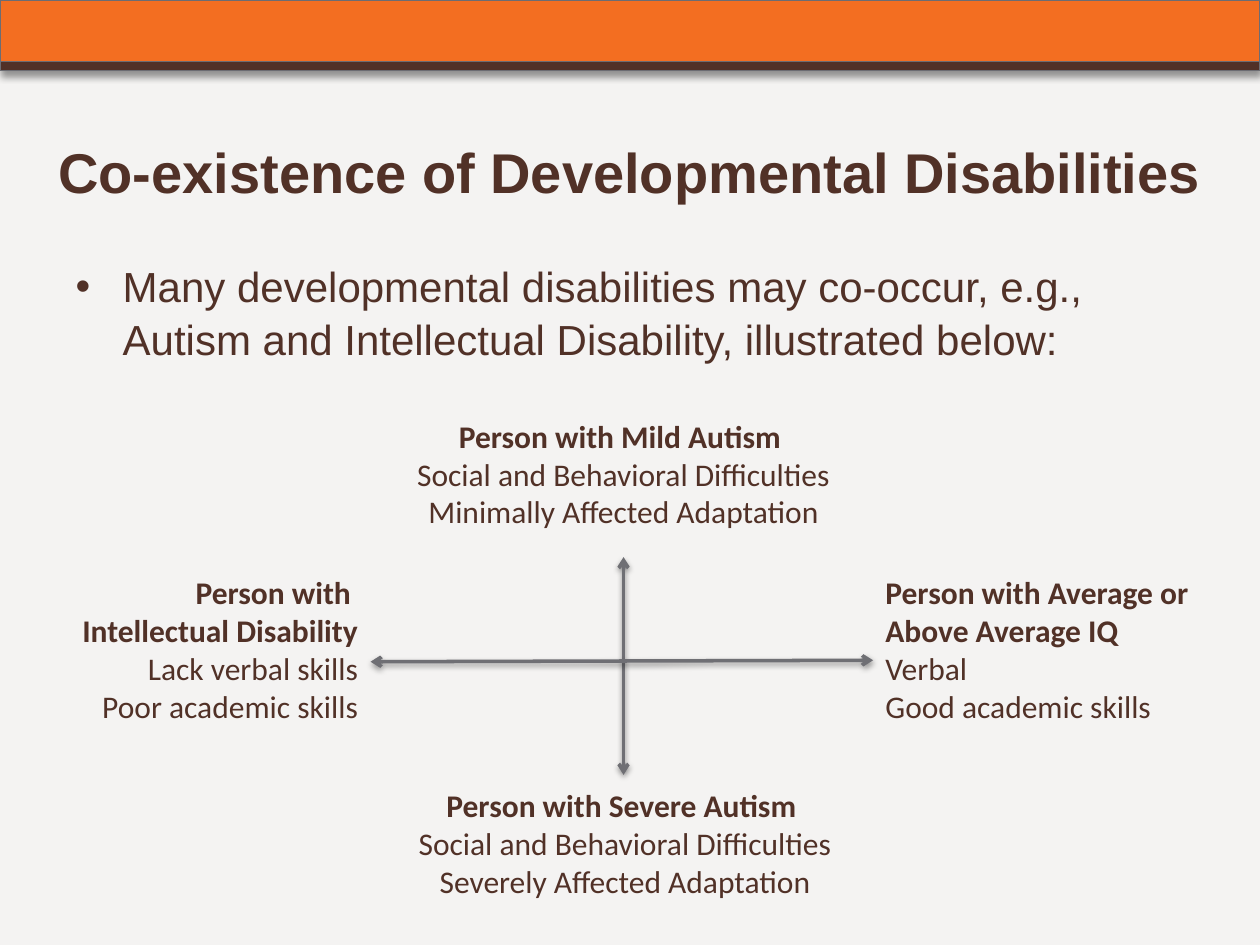
from lxml import etree
from pptx import Presentation
from pptx.dml.color import RGBColor
from pptx.enum import shapes, text
from pptx.oxml import ns
from pptx.util import Cm, Pt

BROWN, ORANGE = "513127", "F36E21"
BORDER, AXIS, BACKGROUND = "6C6C72", "6F6F74", "F4F3F2"


def paint(colored, hex_color):
    """Colour a font, or a fill once it has been made solid."""
    target = colored if hasattr(colored, "size") else colored.fore_color
    if target is colored:
        target = colored.color
    target.rgb = RGBColor.from_string(hex_color)


def drop_shadow(shape, blur, distance, opacity):
    """Set a downward black shadow; lengths in points, opacity in percent."""
    props = shape._element.spPr
    effects = etree.SubElement(props, ns.qn("a:effectLst"))
    shadow = etree.SubElement(
        effects, ns.qn("a:outerShdw"), blurRad=str(Pt(blur)),
        dist=str(Pt(distance)), dir="5400000", rotWithShape="0")
    black = etree.SubElement(shadow, ns.qn("a:srgbClr"), val="000000")
    etree.SubElement(black, ns.qn("a:alpha"), val=str(opacity * 1000))


prs = Presentation()
prs.slide_width, prs.slide_height = Cm(25.4), Cm(19.05)
slide = prs.slides.add_slide(prs.slide_layouts[1])
slide.background.fill.solid()
paint(slide.background.fill, BACKGROUND)
title, body = slide.placeholders

# Header band: a brown strip showing below an orange one
for height, color, shadowed in ((1.42, BROWN, True), (1.24, ORANGE, False)):
    band = slide.shapes.add_shape(
        shapes.MSO_SHAPE.RECTANGLE, 0, 0, prs.slide_width, Cm(height))
    band.fill.solid()
    paint(band.fill, color)
    band.line.width = Pt(0.75)
    band.line.fill.solid()
    paint(band.line.fill, BORDER)
    if shadowed:
        drop_shadow(band, 4, 3, 40)
    else:
        band.shadow.inherit = False

# Axes of the diagram
for ends in ((12.57, 11.23, 12.57, 15.62), (7.47, 13.34, 17.6, 13.31)):
    axis = slide.shapes.add_connector(
        shapes.MSO_CONNECTOR.STRAIGHT, *(Cm(value) for value in ends))
    axis.line.width = Pt(2)
    axis.line.fill.solid()
    paint(axis.line.fill, AXIS)
    for end in ("headEnd", "tailEnd"):
        etree.SubElement(axis.line._get_or_add_ln(), ns.qn("a:" + end), type="arrow")
    drop_shadow(axis, 3.1, 1.6, 38)

# Descriptions at the four ends: bold heading, then plain lines
CENTER, RIGHT, LEFT = text.PP_ALIGN.CENTER, text.PP_ALIGN.RIGHT, text.PP_ALIGN.LEFT
descriptions = (
    ((7.72, 8.28, 9.7, 2.57), CENTER,
     ("Person with Mild Autism ", "Social and Behavioral Difficulties",
      "Minimally Affected Adaptation")),
    ((7.75, 15.72, 9.7, 2.57), CENTER,
     ("Person with Severe Autism ", "Social and Behavioral Difficulties",
      "Severely Affected Adaptation")),
    ((0.28, 11.43, 7.19, 3.33), RIGHT,
     ("Person with \nIntellectual Disability", "Lack verbal skills",
      "Poor academic skills")),
    ((17.6, 11.43, 6.73, 3.33), LEFT,
     ("Person with Average or Above Average IQ", "Verbal",
      "Good academic skills")),
)
for place, alignment, lines in descriptions:
    frame = slide.shapes.add_textbox(*(Cm(value) for value in place)).text_frame
    frame.word_wrap = True
    frame.auto_size = text.MSO_AUTO_SIZE.SHAPE_TO_FIT_TEXT
    for index, line in enumerate(lines):
        paragraph = frame.add_paragraph() if index else frame.paragraphs[0]
        paragraph.alignment = alignment
        for part_index, part in enumerate(line.split("\n")):
            if part_index:
                paragraph.add_line_break()
            run = paragraph.add_run()
            run.text = part
            run.font.name, run.font.size = "Calibri", Pt(18)
            run.font.bold = index == 0
            paint(run.font, BROWN)

# Title and bullet
placeholders = (
    (title, (0, 1.85, 25.4, 3.18), 32, True,
     "Co-existence of Developmental Disabilities"),
    (body, (1.27, 5.08, 22.86, 12.57), 24, False,
     "Many developmental disabilities may co-occur, e.g., "
     "Autism and Intellectual Disability, illustrated below:"),
)
for holder, place, size, bold, wording in placeholders:
    holder.left, holder.top, holder.width, holder.height = (Cm(v) for v in place)
    holder.text_frame.auto_size = text.MSO_AUTO_SIZE.NONE
    run = holder.text_frame.paragraphs[0].add_run()
    run.text = wording
    run.font.name, run.font.size, run.font.bold = "Arial", Pt(size), bold
    paint(run.font, BROWN)

title.text_frame.vertical_anchor = text.MSO_ANCHOR.MIDDLE
title.text_frame.paragraphs[0].alignment = CENTER
bullet = body.text_frame.paragraphs[0]
bullet.space_before = Pt(0)
bullet.line_spacing = 1.05
bullet_props = bullet._p.get_or_add_pPr()
bullet_props.set("marL", str(Cm(0.95)))
bullet_props.set("indent", str(-Cm(0.95)))
etree.SubElement(bullet_props, ns.qn("a:buFont"), typeface="Arial")
etree.SubElement(bullet_props, ns.qn("a:buChar"), char="•")

prs.save("out.pptx")
